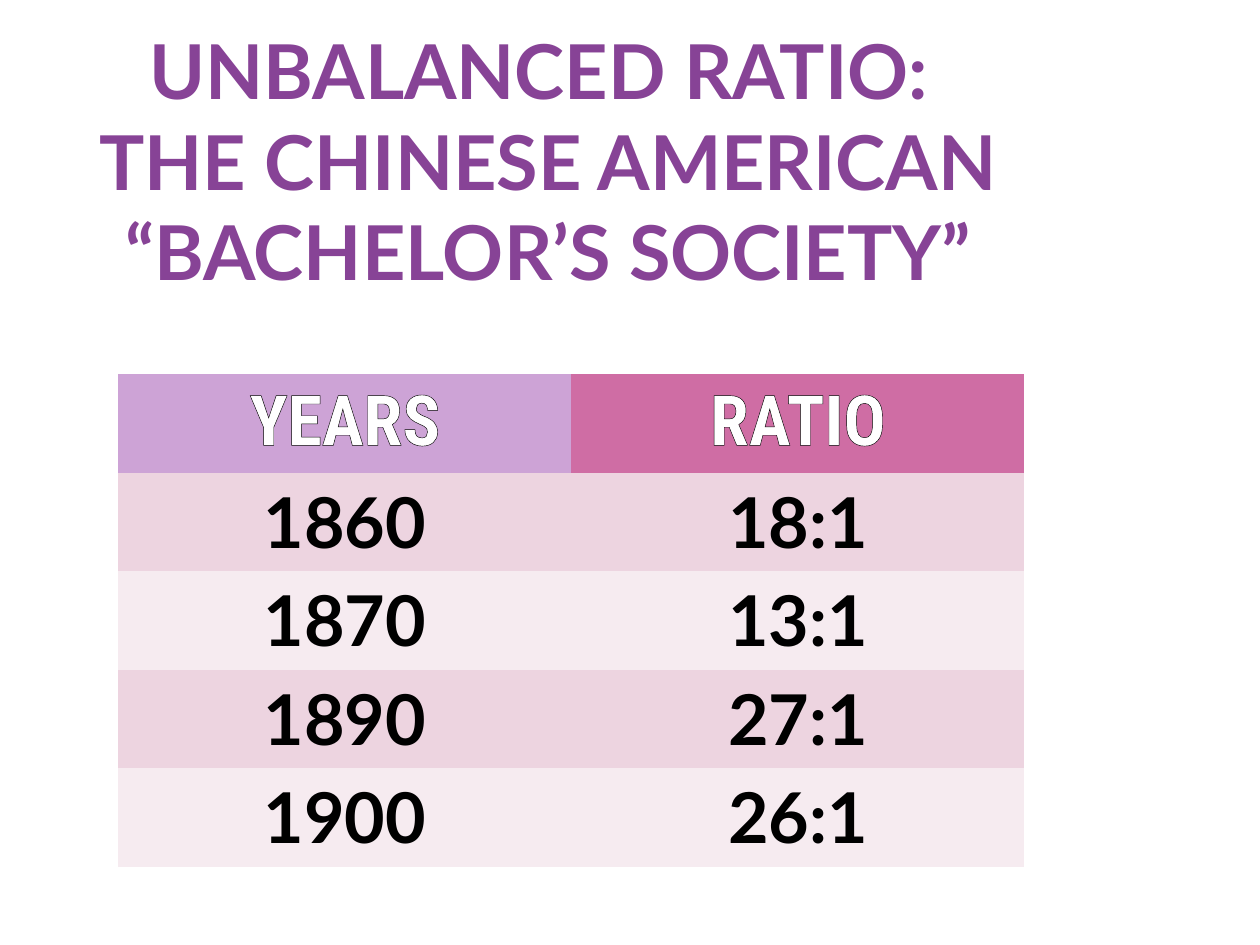
from lxml.etree import SubElement
from pptx import Presentation
from pptx.dml.color import RGBColor
from pptx.enum.text import MSO_ANCHOR, PP_ALIGN
from pptx.oxml.ns import qn
from pptx.util import Inches, Pt

PURPLE, PLUM, WHITE, BLACK = "874396", "5E1A50", "FFFFFF", "000000"
HEADER_FILLS = ["CDA3D6", "CF6DA4"]
BAND_FILLS = ["EDD4E0", "F6EBF0"]
RATIOS = [
    ("YEARS", "RATIO"),
    ("1860", "18:1"),
    ("1870", "13:1"),
    ("1890", "27:1"),
    ("1900", "26:1"),
]


def color(hex_code):
    return RGBColor.from_string(hex_code)


def style_text(paragraph, font_name, size, hex_code):
    paragraph.alignment = PP_ALIGN.CENTER
    font = paragraph.font
    font.name, font.size, font.bold = font_name, Pt(size), True
    font.color.rgb = color(hex_code)


def outline_text(paragraph, hex_code, width):
    for run in paragraph.runs:
        properties = run._r.get_or_add_rPr()
        outline = SubElement(properties, qn("a:ln"), w=str(Pt(width)))
        fill = SubElement(outline, qn("a:solidFill"))
        SubElement(fill, qn("a:srgbClr"), val=hex_code)
        properties.insert(0, outline)


def add_title(slide, text):
    title = slide.shapes.add_textbox(Inches(0.39), Inches(0.16), Inches(7.92), Inches(2.19))
    frame = title.text_frame
    frame.word_wrap = True
    frame.vertical_anchor = MSO_ANCHOR.BOTTOM
    frame.margin_left = frame.margin_right = Inches(0.05)
    frame.margin_top = frame.margin_bottom = 0
    heading = frame.paragraphs[0]
    heading.text = text
    style_text(heading, "Lato", 43.2, PURPLE)
    outline_text(heading, PLUM, 0.04)


def add_ratio_table(slide, rows):
    table = slide.shapes.add_table(
        len(rows), len(rows[0]), Inches(0.94), Inches(2.97), Inches(7.19), Inches(3.91)
    ).table
    for row_index, row in enumerate(rows):
        is_header = row_index == 0
        for column_index, value in enumerate(row):
            cell = table.cell(row_index, column_index)
            cell.text = value
            entry = cell.text_frame.paragraphs[0]
            cell.fill.solid()
            if is_header:
                cell.fill.fore_color.rgb = color(HEADER_FILLS[column_index])
                style_text(entry, "Roboto Condensed", 40, WHITE)
                outline_text(entry, BLACK, 0.75)
            else:
                cell.fill.fore_color.rgb = color(BAND_FILLS[(row_index - 1) % 2])
                style_text(entry, "Lato", 40, BLACK)
    # Plain grid style, so that no borders show between the cells
    style_id = table._tbl.tblPr.find(qn("a:tableStyleId"))
    style_id.text = "{2D5ABB26-0587-4C30-8999-92F81FD0307C}"


def main():
    presentation = Presentation()
    presentation.slide_width, presentation.slide_height = Inches(10), Inches(7.5)
    slide = presentation.slides.add_slide(presentation.slide_layouts[6])

    # Title in three lines
    add_title(slide, "UNBALANCED RATIO: \vTHE CHINESE AMERICAN\v“BACHELOR’S SOCIETY”")

    # Ratio by year
    add_ratio_table(slide, RATIOS)

    presentation.save("out.pptx")


if __name__ == "__main__":
    main()
